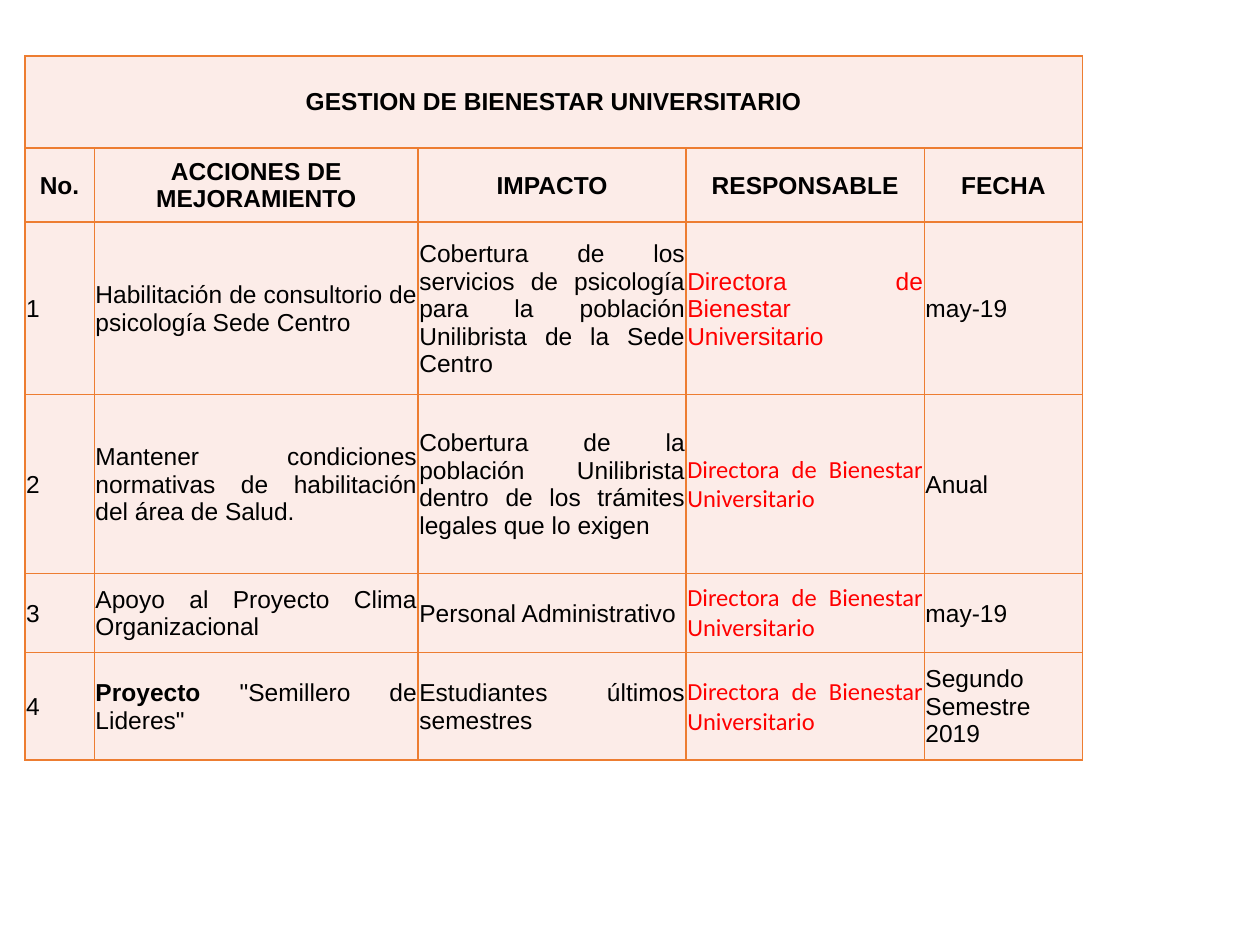
import pptx
import pptx.dml.color
import pptx.enum.text
import pptx.oxml
import pptx.oxml.ns
import pptx.util

Pt = pptx.util.Pt
ALIGN = pptx.enum.text.PP_ALIGN

TITLE = "GESTION DE BIENESTAR UNIVERSITARIO"
HEADERS = ["No.", "ACCIONES DE MEJORAMIENTO", "IMPACTO", "RESPONSABLE", "FECHA"]
RESPONSIBLE = "Directora de Bienestar Universitario"
# Each action is a (bold lead, remaining text) pair.
ACTIONS = [
    (("", "Habilitación de consultorio de psicología Sede Centro"),
     "Cobertura de los servicios de psicología para la población Unilibrista de la Sede Centro",
     "may-19"),
    (("", "Mantener condiciones normativas de habilitación del área de Salud."),
     "Cobertura de la población Unilibrista dentro de los trámites legales que lo exigen",
     "Anual"),
    (("", "Apoyo al Proyecto Clima Organizacional"), "Personal Administrativo", "may-19"),
    (("Proyecto", ' "Semillero de Lideres"'), "Estudiantes últimos semestres",
     "Segundo Semestre 2019"),
]

THEME = {
    "font": "Arial", "alternate_font": "Calibri", "size": 14,
    "text": "000000", "accent": "FF0000", "fill": "FCECE8", "border": "ED7D31",
}
SLIDE_SIZE = (720, 540)
TABLE_LEFT, TABLE_TOP = 14.2, 31.9
COLUMN_WIDTHS = [39.7, 185.1, 153.1, 136.1, 90.5]
ROW_HEIGHTS = [52.6, 42.5, 98.6, 102.1, 45.2, 61.6]
CELL_INSET = 0.7
BORDER_WIDTH = 1


def add_text(paragraph, text, bold=False, color=THEME["text"], font=THEME["font"],
             align=ALIGN.JUSTIFY):
    paragraph.alignment = align
    run = paragraph.add_run()
    run.text = text
    run.font.name = font
    run.font.size = Pt(THEME["size"])
    run.font.bold = bold
    run.font.color.rgb = pptx.dml.color.RGBColor.from_string(color)


def style_cell(cell):
    cell.margin_left = cell.margin_top = cell.margin_right = Pt(CELL_INSET)
    cell.margin_bottom = 0
    cell.vertical_anchor = pptx.enum.text.MSO_ANCHOR.MIDDLE
    properties = cell._tc.get_or_add_tcPr()
    for side in ("lnL", "lnR", "lnT", "lnB"):
        properties.append(pptx.oxml.parse_xml(
            f'<a:{side} {pptx.oxml.ns.nsdecls("a")} w="{Pt(BORDER_WIDTH)}">'
            f'<a:solidFill><a:srgbClr val="{THEME["border"]}"/></a:solidFill></a:{side}>'))
    cell.fill.solid()
    cell.fill.fore_color.rgb = pptx.dml.color.RGBColor.from_string(THEME["fill"])


def add_table(slide):
    frame = slide.shapes.add_table(
        len(ROW_HEIGHTS), len(COLUMN_WIDTHS), Pt(TABLE_LEFT), Pt(TABLE_TOP),
        Pt(sum(COLUMN_WIDTHS)), Pt(sum(ROW_HEIGHTS)))
    table = frame.table
    for column, width in zip(table.columns, COLUMN_WIDTHS):
        column.width = Pt(width)
    for row, height in zip(table.rows, ROW_HEIGHTS):
        row.height = Pt(height)
    for cell in table.iter_cells():
        style_cell(cell)
    table.cell(0, 0).merge(table.cell(0, len(COLUMN_WIDTHS) - 1))
    return table


def fill_table(table):
    def paragraph_at(row, column):
        return table.cell(row, column).text_frame.paragraphs[0]

    add_text(paragraph_at(0, 0), TITLE, bold=True, align=ALIGN.CENTER)
    for column, header in enumerate(HEADERS):
        add_text(paragraph_at(1, column), header, bold=True, align=ALIGN.CENTER)
    for number, ((lead, action), impact, date) in enumerate(ACTIONS, start=1):
        row = number + 1
        add_text(paragraph_at(row, 0), str(number), align=ALIGN.LEFT)
        if lead:
            add_text(paragraph_at(row, 1), lead, bold=True)
        add_text(paragraph_at(row, 1), action)
        add_text(paragraph_at(row, 2), impact)
        add_text(paragraph_at(row, 3), RESPONSIBLE, color=THEME["accent"],
                 font=THEME["font"] if number == 1 else THEME["alternate_font"])
        add_text(paragraph_at(row, 4), date)


def main():
    presentation = pptx.Presentation()
    presentation.slide_width, presentation.slide_height = map(Pt, SLIDE_SIZE)
    slide = presentation.slides.add_slide(presentation.slide_layouts[6])
    fill_table(add_table(slide))
    presentation.save("out.pptx")


if __name__ == "__main__":
    main()
